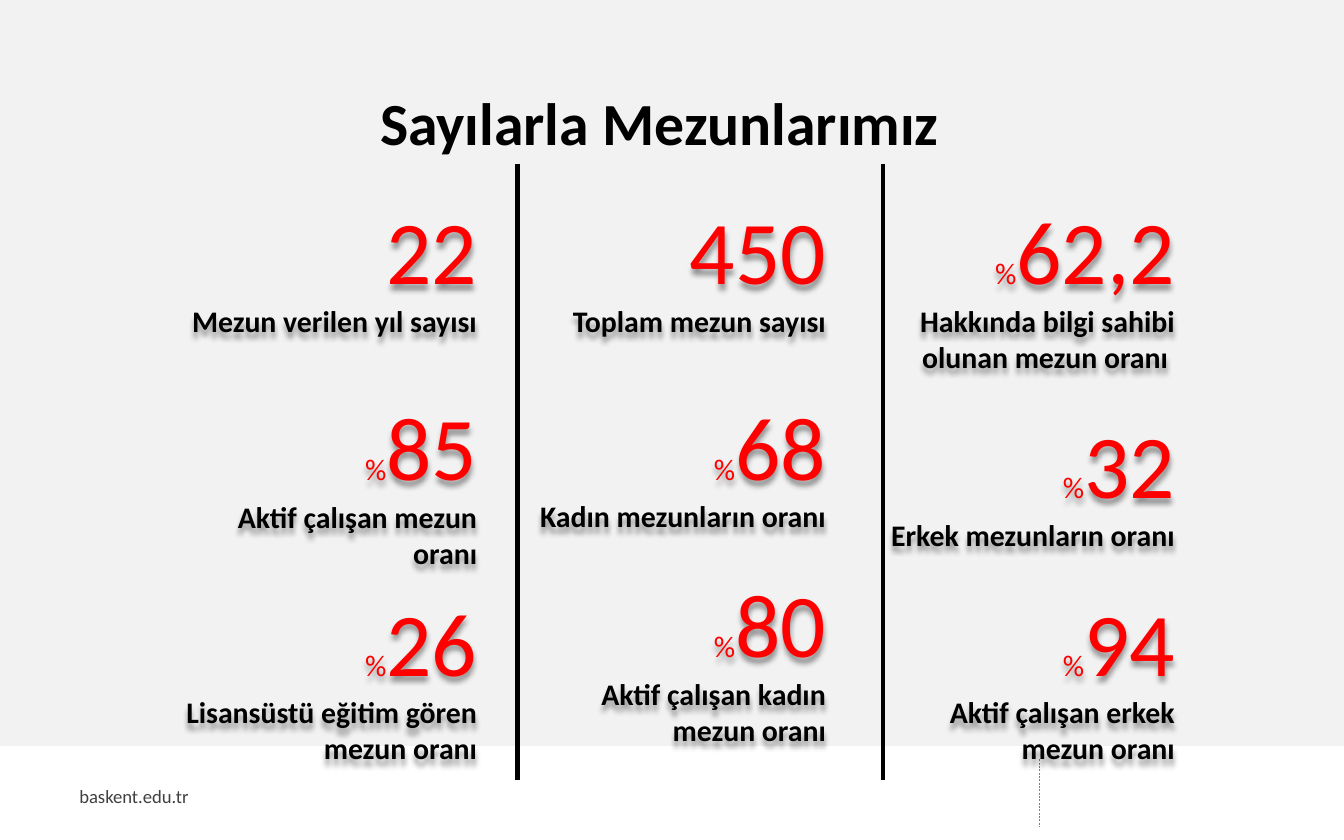
from lxml import etree
from pptx import Presentation
from pptx.dml.color import RGBColor
from pptx.enum.dml import MSO_LINE
from pptx.enum.shapes import MSO_CONNECTOR, MSO_SHAPE
from pptx.enum.text import MSO_ANCHOR, PP_ALIGN
from pptx.oxml.ns import qn
from pptx.util import Pt

STRAIGHT, RECTANGLE, DASH = MSO_CONNECTOR.STRAIGHT, MSO_SHAPE.RECTANGLE, MSO_LINE.DASH
MIDDLE, BOTTOM = MSO_ANCHOR.MIDDLE, MSO_ANCHOR.BOTTOM
LEFT, CENTER, RIGHT = PP_ALIGN.LEFT, PP_ALIGN.CENTER, PP_ALIGN.RIGHT

BACKGROUND = RGBColor(0xF2, 0xF2, 0xF2)
WHITE = RGBColor(0xFF, 0xFF, 0xFF)
BLACK = RGBColor(0, 0, 0)
RED = RGBColor(0xFF, 0, 0)
GRAY = RGBColor(0x80, 0x80, 0x80)
DARK_GRAY = RGBColor(0x40, 0x40, 0x40)

# Content: (prefix, value, caption, room for one more line below)
TITLE = "Sayılarla Mezunlarımız"
SITE = "baskent.edu.tr"
STATISTICS = [
    [("", "22", "Mezun verilen yıl sayısı", True),
     ("", "450", "Toplam mezun sayısı", True),
     ("%", "62,2", "Hakkında bilgi sahibi olunan mezun oranı ", False)],
    [("%", "85", "Aktif çalışan mezun oranı", False),
     ("%", "68", "Kadın mezunların oranı", True),
     ("%", "32", "Erkek mezunların oranı", False)],
    [("%", "26", "Lisansüstü eğitim gören mezun oranı", False),
     ("%", "80", "Aktif çalışan kadın mezun oranı", True),
     ("%", "94", "Aktif çalışan erkek mezun oranı", False)],
]

# Layout in points
SLIDE_W, SLIDE_H = 720, 450
FOOTER_TOP = 399.6
GRID_LEFT, GRID_TOP = 90, 112.3
COLUMN_STEP, ROW_STEP = 186.9, 104.8
CELL_W, CELL_H = 166.3, 80.6
INSET = 0.72
CAPTION_LINE = 19.5
DIVIDER_XS = (277.2, 473)
DIVIDER_TOP, DIVIDER_BOTTOM = 87.8, 417.6

VALUE = {"size": Pt(48), "bold": False, "color": RED}
PREFIX = {"size": Pt(16), "bold": False, "color": RED}
CAPTION = {"size": Pt(16), "bold": True, "color": BLACK}
HEADING = {"size": Pt(32), "bold": True, "color": BLACK}
SMALL = {"size": Pt(10), "bold": False, "color": DARK_GRAY}


def set_shadow(shape, blur, distance, opacity):
    shape.shadow.inherit = False
    effects = shape._element.spPr.find(qn("a:effectLst"))
    shadow = etree.SubElement(effects, qn("a:outerShdw"), blurRad=str(Pt(blur)),
                              dist=str(Pt(distance)), dir="5400000", rotWithShape="0")
    color = etree.SubElement(shadow, qn("a:srgbClr"), val="000000")
    etree.SubElement(color, qn("a:alpha"), val=str(opacity * 1000))


def add_text(slide, box, paragraphs, anchor, align, margins):
    textbox = slide.shapes.add_textbox(*map(Pt, box))
    frame = textbox.text_frame
    frame.word_wrap = True
    frame.vertical_anchor = anchor
    for side, margin in zip(("left", "top", "right", "bottom"), margins):
        setattr(frame, f"margin_{side}", Pt(margin))
    for index, runs in enumerate(paragraphs):
        paragraph = frame.add_paragraph() if index else frame.paragraphs[0]
        paragraph.alignment = align
        for text, style in runs:
            run = paragraph.add_run()
            run.text = text
            run.font.name = "Calibri"
            for key, value in style.items():
                if key == "color":
                    run.font.color.rgb = value
                else:
                    setattr(run.font, key, value)
    return textbox


def add_vertical(slide, x, top, bottom, color, width):
    line = slide.shapes.add_connector(STRAIGHT, Pt(x), Pt(top), Pt(x), Pt(bottom))
    line.line.color.rgb = color
    line.line.width = Pt(width)
    etree.SubElement(line._element.spPr, qn("a:effectLst"))
    return line


def main():
    deck = Presentation()
    deck.slide_width, deck.slide_height = Pt(SLIDE_W), Pt(SLIDE_H)
    slide = deck.slides.add_slide(deck.slide_layouts[6])
    slide.background.fill.solid()
    slide.background.fill.fore_color.rgb = BACKGROUND

    # Footer
    footer = slide.shapes.add_shape(RECTANGLE, 0, Pt(FOOTER_TOP), Pt(SLIDE_W),
                                    Pt(SLIDE_H - FOOTER_TOP))
    footer.fill.solid()
    footer.fill.fore_color.rgb = WHITE
    footer.line.fill.background()
    set_shadow(footer, 3.1, 1.8, 35)
    footer_rule = add_vertical(slide, 556.6, 406.8, 442.8, GRAY, 0.25)
    footer_rule.line.dash_style = DASH
    add_text(slide, (42.5, 416.9, 142.6, 19.4), [[(SITE, SMALL)]], MIDDLE, LEFT, [0] * 4)

    # Title
    add_text(slide, (83.5, 36.7, 540, 51.1), [[(TITLE, HEADING)]], BOTTOM, CENTER,
             (7.2, 3.6, 7.2, 3.6))

    # Statistics grid
    for row, statistics in enumerate(STATISTICS):
        for column, (prefix, value, caption, extra_line) in enumerate(statistics):
            box = (GRID_LEFT + column * COLUMN_STEP, GRID_TOP + row * ROW_STEP,
                   CELL_W, CELL_H)
            number = [(prefix, PREFIX)] if prefix else []
            number.append((value, VALUE))
            bottom = INSET + (CAPTION_LINE if extra_line else 0)
            statistic = add_text(slide, box, [number, [(caption, CAPTION)]], MIDDLE, RIGHT,
                                 (INSET, INSET, INSET, bottom))
            set_shadow(statistic, 3, 3, 40)

    # Column dividers
    for x in DIVIDER_XS:
        add_vertical(slide, x, DIVIDER_TOP, DIVIDER_BOTTOM, BLACK, 2.25)

    deck.save("out.pptx")


if __name__ == "__main__":
    main()
